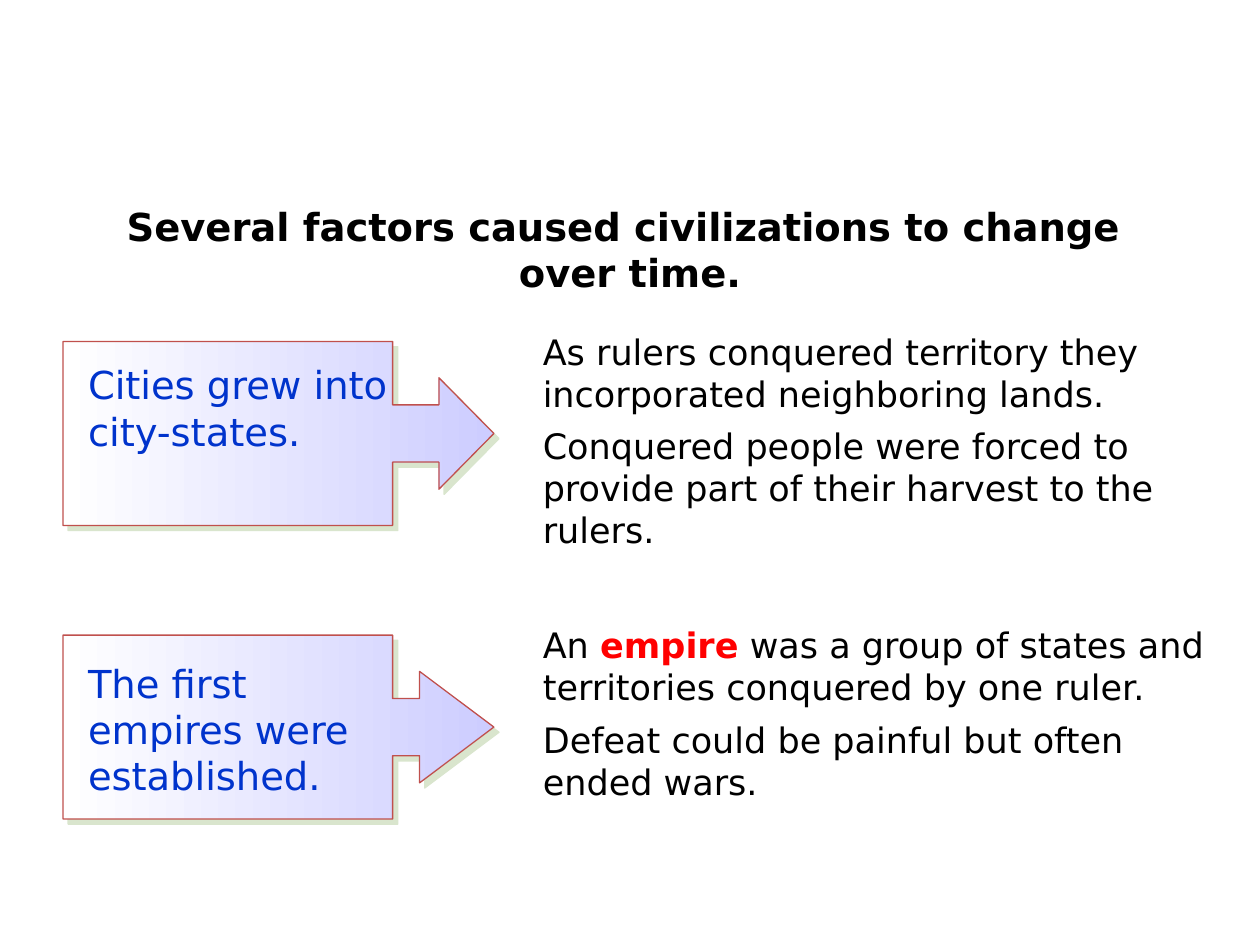
import pptx
import pptx.util
import pptx.dml.color
import pptx.enum.shapes
import pptx.enum.text
import pptx.oxml
import pptx.oxml.ns


def colour(value):
    return pptx.dml.color.RGBColor.from_string(value)


def add_text(page, left, top, width, height, paragraphs, size, ink, bold=False):
    box = page.shapes.add_textbox(
        int(left * column), int(top * row), int(width * column), int(height * row)
    )
    frame = box.text_frame
    frame.word_wrap = True
    frame.auto_size = pptx.enum.text.MSO_AUTO_SIZE.SHAPE_TO_FIT_TEXT
    for index, words in enumerate(paragraphs):
        para = frame.paragraphs[0] if index == 0 else frame.add_paragraph()
        para.text = words
        for span in para.runs:
            span.font.name = "DejaVu Sans"
            span.font.size = pptx.util.Pt(size)
            span.font.bold = bold
            span.font.color.rgb = colour(ink)
    return frame


deck = pptx.Presentation()
deck.slide_width = pptx.util.Inches(10)
deck.slide_height = pptx.util.Inches(7.5)
column = deck.slide_width / 100
row = deck.slide_height / 100
page = deck.slides.add_slide(deck.slide_layouts[6])

title = add_text(
    page, 5, 20.8, 90, 11.07,
    ["Several factors caused civilizations to change \vover time."],
    22, "000000", True,
)
title.paragraphs[0].alignment = pptx.enum.text.PP_ALIGN.CENTER

stages = [
    ("Cities grew into city-states.", 37.6, 0.299, 26.27, [
        "As rulers conquered territory they incorporated neighboring lands.",
        "Conquered people were forced to provide part of their harvest to the rulers.",
    ]),
    ("The first empires were established.", 69.2, 0.404, 21.87, [
        "An ",
        "Defeat could be painful but often ended wars.",
    ]),
]
stage_pitch = 31.07
shadow_xml = (
    '<a:outerShdw %s blurRad="0" dist="53340" dir="2700000" rotWithShape="0">'
    '<a:srgbClr val="ADC793"><a:alpha val="46000"/></a:srgbClr></a:outerShdw>'
    % pptx.oxml.ns.nsdecls("a")
)

for index, (label, label_top, head_length, detail_height, details) in enumerate(stages):
    offset = index * stage_pitch
    callout = page.shapes.add_shape(
        pptx.enum.shapes.MSO_SHAPE.UP_ARROW_CALLOUT,
        int(14.8 * column), int((23.07 + offset) * row),
        int(14.6 * column), int(45.6 * row),
    )
    callout.rotation = 90
    callout.element.spPr.xfrm.set("flipH", "1")
    for position, share in enumerate((0.311, 0.303, head_length, 0.765)):
        callout.adjustments[position] = share
    callout.fill.gradient()
    callout.fill.gradient_angle = 270
    for stop, tint in zip(callout.fill.gradient_stops, ("CDCDFF", "FFFFFF")):
        stop.color.rgb = colour(tint)
    callout.line.color.rgb = colour("C0504D")
    callout.line.width = pptx.util.Pt(0.75)
    callout.shadow.inherit = False
    effects = callout.element.spPr.find(pptx.oxml.ns.qn("a:effectLst"))
    effects.append(pptx.oxml.parse_xml(shadow_xml))

    add_text(page, 6, label_top, 25.8, 16, [label], 22, "0033CC")
    detail = add_text(
        page, 42.1, 34.27 + offset, 55, detail_height, details, 20, "000000"
    )
    for para in detail.paragraphs:
        para.space_after = pptx.util.Pt(6)

definition = detail.paragraphs[0]
for words, ink, bold in (
    ("empire", "FF0000", True),
    (" was a group of states and territories conquered by one ruler.", "000000", False),
):
    span = definition.add_run()
    span.text = words
    span.font.name = "DejaVu Sans"
    span.font.size = pptx.util.Pt(20)
    span.font.bold = bold
    span.font.color.rgb = colour(ink)

deck.save("out.pptx")
